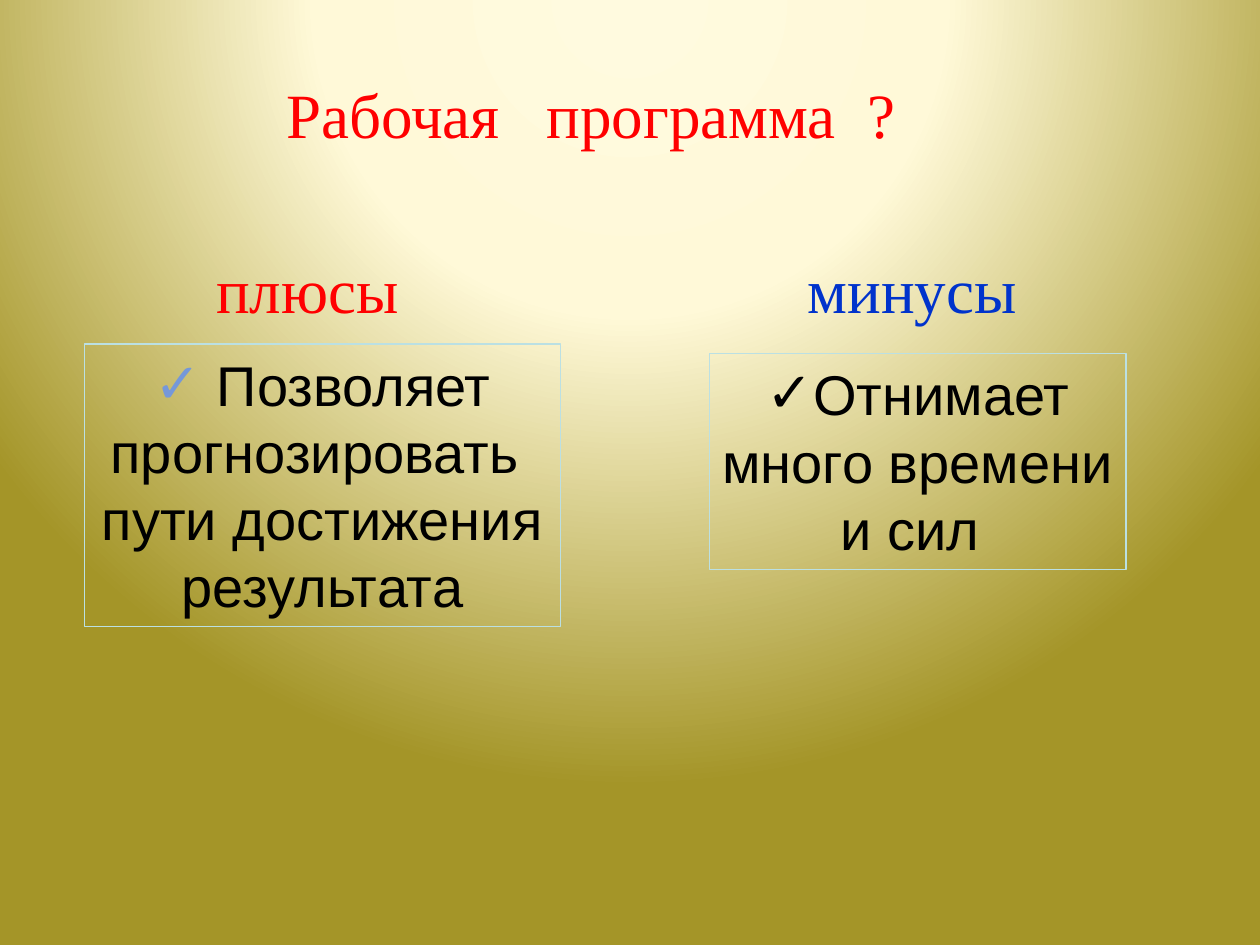
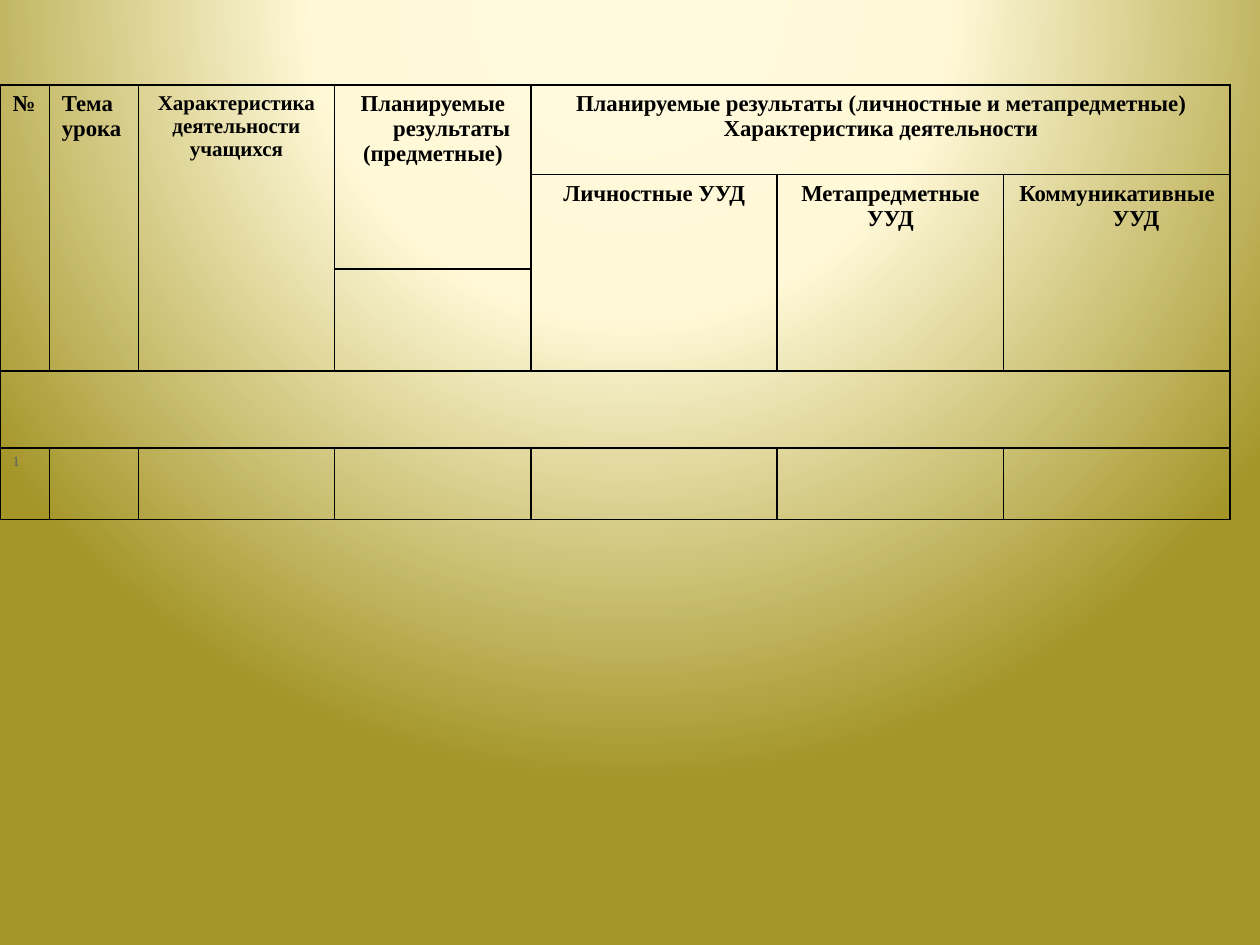
"""Two slides on the work programme: pros and cons, and a planning table."""
import pptx
import pptx.dml.color
import pptx.enum.text
import pptx.oxml
import pptx.oxml.ns
import pptx.util

Pt = pptx.util.Pt
qn = pptx.oxml.ns.qn
ALIGN = pptx.enum.text.PP_ALIGN
SERIF, SANS = "Times New Roman", "Arial"
COLORS = {
    "red": "FF0000", "blue": "0033CC", "black": "000000", "check": "7598D9",
    "frame": "BBE0E3", "number": "575F6D",
    "glow": "FFFADF", "cream": "FFF9D8", "olive": "A49528",
}
NAMESPACE = 'xmlns:a="http://schemas.openxmlformats.org/drawingml/2006/main"'


def style_font(font, name, size, color, bold=False):
    font.name, font.size, font.bold = name, Pt(size), bold
    font.color.rgb = pptx.dml.color.RGBColor.from_string(COLORS[color])


def place(box, text, bounds):
    box.left, box.top, box.width, box.height = map(Pt, bounds)
    frame = box.text_frame
    frame.text = text
    frame.word_wrap = True
    frame.auto_size = pptx.enum.text.MSO_AUTO_SIZE.NONE
    frame.vertical_anchor = pptx.enum.text.MSO_ANCHOR.TOP
    para = frame.paragraphs[0]
    para.alignment = ALIGN.CENTER
    para.line_spacing = 1.0
    para.space_before = Pt(0)
    return para


deck = pptx.Presentation()
deck.slide_width, deck.slide_height = Pt(720), Pt(540)

master = deck.slide_master
master.background.fill.gradient()
gradient = master.element.find(".//" + qn("a:gradFill"))
stops = "".join(
    f'<a:gs pos="{position * 1000}"><a:srgbClr val="{COLORS[name]}"/></a:gs>'
    for position, name in ((0, "glow"), (40, "cream"), (100, "olive")))
gradient.getparent().replace(gradient, pptx.oxml.parse_xml(
    f'<a:gradFill {NAMESPACE} rotWithShape="1"><a:gsLst>{stops}</a:gsLst>'
    '<a:path path="circle"><a:fillToRect l="50000" t="-80000" r="50000" b="180000"/>'
    '</a:path></a:gradFill>'))

page = deck.slides.add_slide(deck.slide_layouts.get_by_name("Comparison"))
holders = {holder.placeholder_format.idx: holder for holder in page.placeholders}

headings = [
    (0, "Рабочая   программа  ?", (147, 39.5, 381.5, 73.5), "red"),
    (1, "плюсы", (110.5, 139.5, 130.5, 49), "red"),
    (3, "минусы", (445, 139.5, 152.5, 49), "blue"),
]
for index, text, bounds, color in headings:
    para = place(holders[index], text, bounds)
    style_font(para.runs[0].font, SERIF, 36, color)

arguments = [
    (2, [(" ", "check"), ("Позволяет прогнозировать  пути достижения результата", "black")],
     (48.25, 196.5, 272, 161.5)),
    (4, [("Отнимает много времени и сил ", "black")], (405.5, 202, 238, 123.5)),
]
for index, spans, bounds in arguments:
    box = holders[index]
    para = place(box, spans[0][0], bounds)
    for text, color in spans[1:]:
        para.add_run().text = text
    for span, (text, color) in zip(para.runs, spans):
        style_font(span.font, SANS, 32, color)
    properties = para._p.get_or_add_pPr()
    properties.set("marL", "0")
    properties.set("indent", "0")
    properties.append(pptx.oxml.parse_xml(f'<a:buChar {NAMESPACE} char="✓"/>'))
    box.line.color.rgb = pptx.dml.color.RGBColor.from_string(COLORS["frame"])
    box.line.width = Pt(0.75)

page = deck.slides.add_slide(deck.slide_layouts.get_by_name("Blank"))
widths = [28.2, 51.1, 111.8, 112.5, 140.5, 129.5, 129.5]
heights = [51.2, 54, 58.2, 44, 41]
table = page.shapes.add_table(
    len(heights), len(widths), Pt(0), Pt(48.6), Pt(sum(widths)), Pt(sum(heights))).table
table.first_row = table.horz_banding = False
for column, width in zip(table.columns, widths):
    column.width = Pt(width)
for row, height in zip(table.rows, heights):
    row.height = Pt(height)

for cell in table.iter_cells():
    properties = cell._tc.get_or_add_tcPr()
    for side in ("lnL", "lnR", "lnT", "lnB"):
        properties.append(pptx.oxml.parse_xml(
            f'<a:{side} {NAMESPACE} w="{Pt(1)}"><a:solidFill>'
            f'<a:srgbClr val="{COLORS["black"]}"/></a:solidFill></a:{side}>'))
    cell.fill.background()

merges = [((0, column), (2, column)) for column in range(3)]
merges += [((1, column), (2, column)) for column in range(4, 7)]
merges += [((0, 3), (1, 3)), ((0, 4), (0, 6)), ((3, 0), (3, 6))]
for first, last in merges:
    table.cell(*first).merge(table.cell(*last))

entries = [
    (0, 0, "№", 13, ALIGN.LEFT),
    (0, 1, "Тема\nурока", 13, ALIGN.LEFT),
    (0, 2, "Характеристика\nдеятельности\nучащихся", 12, ALIGN.CENTER),
    (0, 3, "Планируемые результаты\n(предметные)", 13, ALIGN.CENTER),
    (0, 4, "Планируемые результаты (личностные и метапредметные)\n"
           "Характеристика деятельности", 13, ALIGN.CENTER),
    (1, 4, "Личностные УУД", 13, ALIGN.CENTER),
    (1, 5, "Метапредметные\nУУД", 13, ALIGN.CENTER),
    (1, 6, "Коммуникативные УУД", 13, ALIGN.CENTER),
    (4, 0, "1", 8, ALIGN.JUSTIFY),
]
for row, column, text, size, alignment in entries:
    frame = table.cell(row, column).text_frame
    frame.text = text
    is_header = row < 2
    for para in frame.paragraphs:
        para.alignment = alignment
        properties = para._p.get_or_add_pPr()
        properties.set("marL", str(Pt(21.6)))
        properties.set("indent", str(-Pt(21.6)))
        style_font(para.runs[0].font, SERIF, size,
                   "black" if is_header else "number", is_header)

deck.save("out.pptx")
